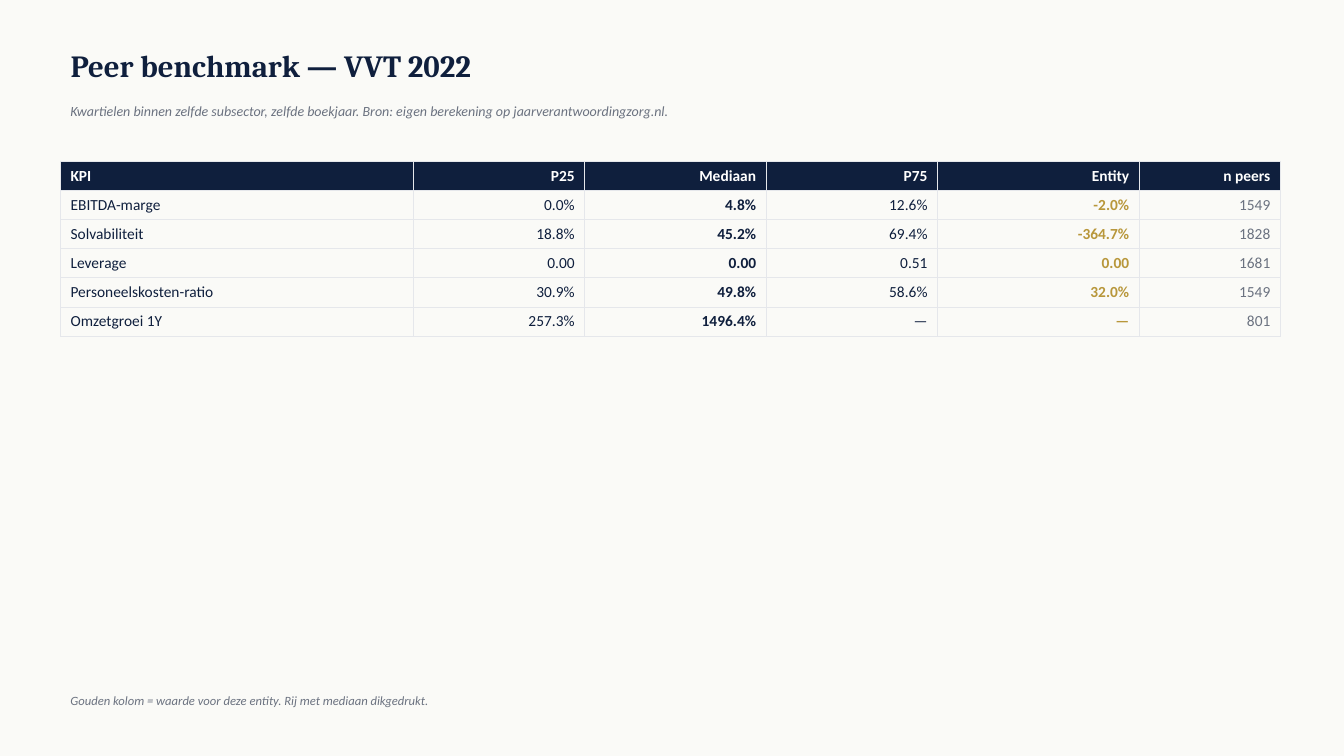
from lxml import etree
from pptx import Presentation
from pptx import util as u
from pptx.dml.color import RGBColor
from pptx.enum import text
from pptx.oxml.ns import qn

PX = 9144
COLOURS = {
    "paper": "FAFAF7",
    "navy": "0F1F3D",
    "grey": "6B7280",
    "gold": "B8973B",
    "white": "FFFFFF",
    "rule": "E5E7EB",
}
LEFT, WIDTH = 60, 1200
COLUMNS = [
    ("KPI", 350, "navy", False),
    ("P25", 170, "navy", False),
    ("Mediaan", 180, "navy", True),
    ("P75", 170, "navy", False),
    ("Entity", 200, "gold", True),
    ("n peers", 140, "grey", False),
]
BENCHMARKS = [
    ("EBITDA-marge", "0.0%", "4.8%", "12.6%", "-2.0%", "1549"),
    ("Solvabiliteit", "18.8%", "45.2%", "69.4%", "-364.7%", "1828"),
    ("Leverage", "0.00", "0.00", "0.51", "0.00", "1681"),
    ("Personeelskosten-ratio", "30.9%", "49.8%", "58.6%", "32.0%", "1549"),
    ("Omzetgroei 1Y", "257.3%", "1496.4%", "—", "—", "801"),
]


class BenchmarkSlide:
    """Holds the style and the slide, and draws each kind of element."""

    def __init__(self, deck):
        self.slide = deck.slides.add_slide(deck.slide_layouts[5])
        backdrop = self.slide.background.fill
        backdrop.solid()
        backdrop.fore_color.rgb = self.colour("paper")

    def colour(self, name):
        return RGBColor.from_string(COLOURS[name])

    def typeset(self, frame, words, size, colour, face="Calibri", bold=False,
                italic=False, align=text.PP_ALIGN.LEFT):
        frame.text = words
        paragraph = frame.paragraphs[0]
        paragraph.alignment = align
        font = paragraph.runs[0].font
        font.name, font.size = face, u.Pt(size)
        font.bold, font.italic = bold, italic
        font.color.rgb = self.colour(colour)

    def settle(self, frame):
        frame.word_wrap = True
        frame.auto_size = text.MSO_AUTO_SIZE.NONE
        frame.vertical_anchor = text.MSO_ANCHOR.MIDDLE

    def title(self, words, top, height):
        heading = self.slide.shapes.title
        heading.left, heading.top = LEFT * PX, top * PX
        heading.width, heading.height = WIDTH * PX, height * PX
        self.settle(heading.text_frame)
        self.typeset(heading.text_frame, words, 22, "navy", "Cambria", bold=True)

    def note(self, words, top, height, size):
        remark = self.slide.shapes.add_textbox(LEFT * PX, top * PX, WIDTH * PX, height * PX)
        self.settle(remark.text_frame)
        self.typeset(remark.text_frame, words, size, "grey", italic=True)

    def border(self, cell):
        properties = cell._tc.get_or_add_tcPr()
        for side in ("a:lnL", "a:lnR", "a:lnT", "a:lnB"):
            line = etree.SubElement(properties, qn(side), w=str(u.Pt(0.5)))
            fill = etree.SubElement(line, qn("a:solidFill"))
            etree.SubElement(fill, qn("a:srgbClr"), val=COLOURS["rule"])

    def table(self, columns, records, top, row_height):
        rows = [[column[0] for column in columns], *records]
        total = sum(column[1] for column in columns)
        grid = self.slide.shapes.add_table(
            len(rows), len(columns), LEFT * PX, top * PX,
            total * PX, len(rows) * row_height * PX).table
        grid.horz_banding = False
        for c, (_, width, colour, bold) in enumerate(columns):
            grid.columns[c].width = width * PX
            align = text.PP_ALIGN.RIGHT if c else text.PP_ALIGN.LEFT
            for r, row in enumerate(rows):
                cell = grid.cell(r, c)
                self.border(cell)
                if r == 0:
                    cell.fill.solid()
                    cell.fill.fore_color.rgb = self.colour("navy")
                    self.typeset(cell.text_frame, row[c], 11, "white", bold=True, align=align)
                else:
                    cell.fill.background()
                    self.typeset(cell.text_frame, row[c], 11, colour, bold=bold, align=align)


def main():
    deck = Presentation()
    deck.slide_width, deck.slide_height = 1333 * PX, 750 * PX
    page = BenchmarkSlide(deck)
    page.title("Peer benchmark — VVT 2022", 40, 50)
    page.note("Kwartielen binnen zelfde subsector, zelfde boekjaar. "
              "Bron: eigen berekening op jaarverantwoordingzorg.nl.", 95, 30, 10)
    page.table(COLUMNS, BENCHMARKS, 160, 28)
    page.note("Gouden kolom = waarde voor deze entity. Rij met mediaan dikgedrukt.", 680, 30, 9)
    deck.save("out.pptx")


if __name__ == "__main__":
    main()
